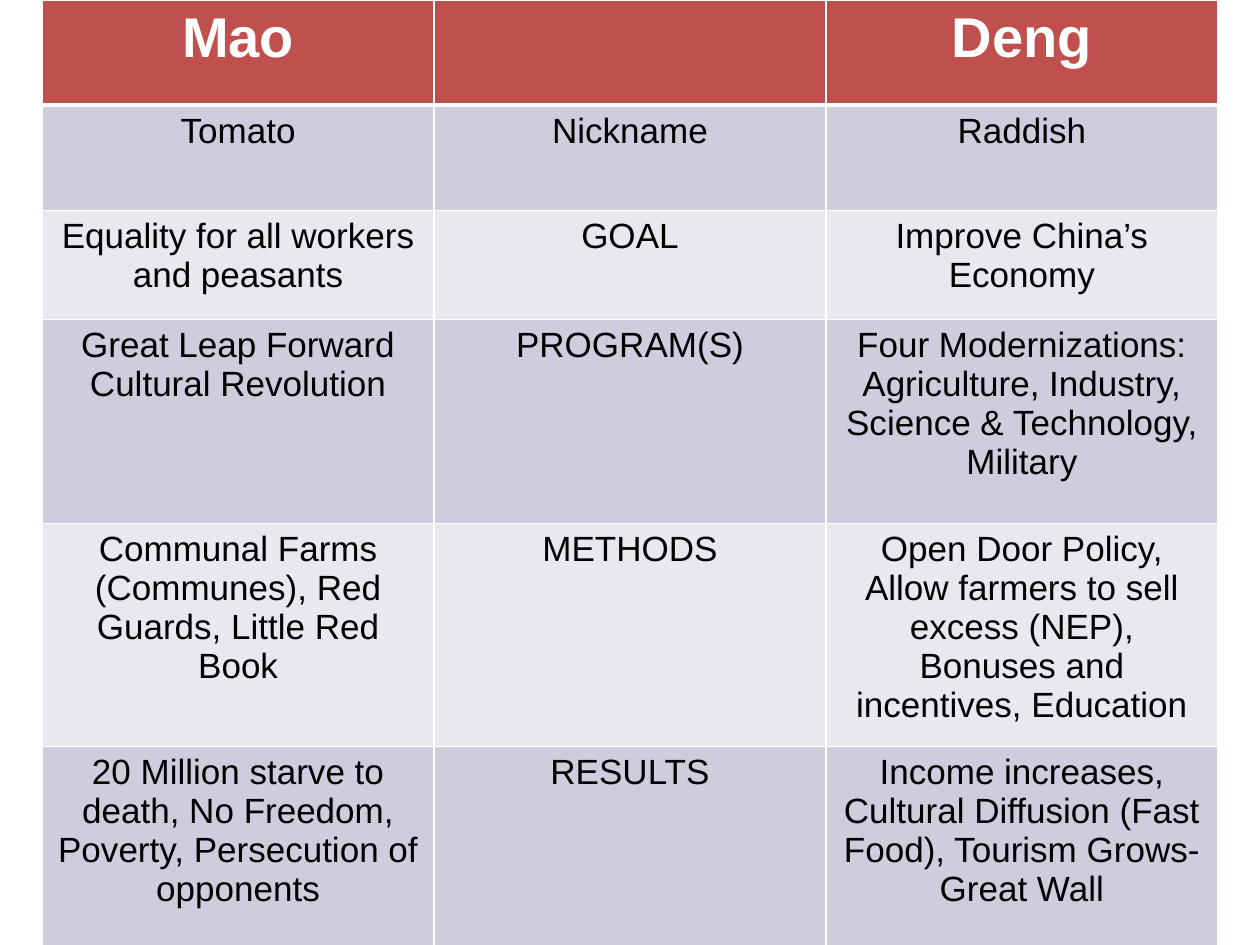
import pptx
import pptx.dml.color
import pptx.enum.text
import pptx.oxml
import pptx.oxml.ns
import pptx.util
from pptx.util import Cm

WHITE, BLACK = "FFFFFF", "000000"
HEAD, DARK, LIGHT = "C0504D", "CDCDDE", "E8E8EF"

ROWS = [
    ("Mao", "", "Deng"),
    ("Tomato", "Nickname", "Raddish"),
    ("Equality for all workers and peasants", "GOAL", "Improve China’s Economy"),
    ("Great Leap Forward\nCultural Revolution", "PROGRAM(S)",
     "Four Modernizations: Agriculture, Industry, Science & Technology, Military"),
    ("Communal Farms (Communes), Red Guards, Little Red Book", "METHODS",
     "Open Door Policy, Allow farmers to sell excess (NEP), "
     "Bonuses and incentives, Education"),
    ("20 Million starve to death, No Freedom, Poverty, Persecution of opponents",
     "RESULTS",
     "Income increases, Cultural Diffusion (Fast Food), Tourism Grows-Great Wall"),
]
HEIGHTS = [2.12, 2.12, 2.2, 4.11, 4.5, 4.11]


def color(text):
    return pptx.dml.color.RGBColor.from_string(text)


def write(frame, text, size=20, bold=False, fill=BLACK, font="Arial"):
    """Fill a text frame with centred paragraphs, one for each line of text."""
    frame.text = text
    for par in frame.paragraphs:
        par.alignment = pptx.enum.text.PP_ALIGN.CENTER
        par.font.size = pptx.util.Pt(size)
        for run in par.runs:
            run.font.size = pptx.util.Pt(size)
            run.font.bold = bold
            run.font.name = font
            run.font.color.rgb = color(fill)


def border(cell, **widths):
    """Draw white cell edges; L, R, T and B give widths in points."""
    props = cell._tc.get_or_add_tcPr()
    for side in "LRTB":
        width = pptx.util.Pt(widths.get(side, 1))
        props.append(pptx.oxml.parse_xml(
            f'<a:ln{side} {pptx.oxml.ns.nsdecls("a")} w="{width}">'
            f'<a:solidFill><a:srgbClr val="{WHITE}"/></a:solidFill></a:ln{side}>'))


def compare(slide, left, top, width, heights, rows):
    """Place a table with a header row and banded body rows."""
    count = len(rows[0])
    table = slide.shapes.add_table(
        len(rows), count, left, top, width, Cm(sum(heights))).table
    for col in table.columns:
        col.width = int(width / count)
    for i, texts in enumerate(rows):
        table.rows[i].height = Cm(heights[i])
        for j, text in enumerate(texts):
            cell = table.cell(i, j)
            border(cell, T=3 if i == 1 else 1, B=3 if i == 0 else 1)
            cell.fill.solid()
            if i == 0:
                cell.fill.fore_color.rgb = color(HEAD)
                write(cell.text_frame, text, size=32, bold=True, fill=WHITE)
            else:
                cell.fill.fore_color.rgb = color(DARK if i % 2 else LIGHT)
                write(cell.text_frame, text)


def main():
    deck = pptx.Presentation()
    deck.slide_width, deck.slide_height = Cm(25.4), Cm(19.05)
    slide = deck.slides.add_slide(deck.slide_layouts[6])
    compare(slide, Cm(0.85), Cm(0), Cm(23.7), HEIGHTS, ROWS)
    deck.save("out.pptx")


if __name__ == "__main__":
    main()
